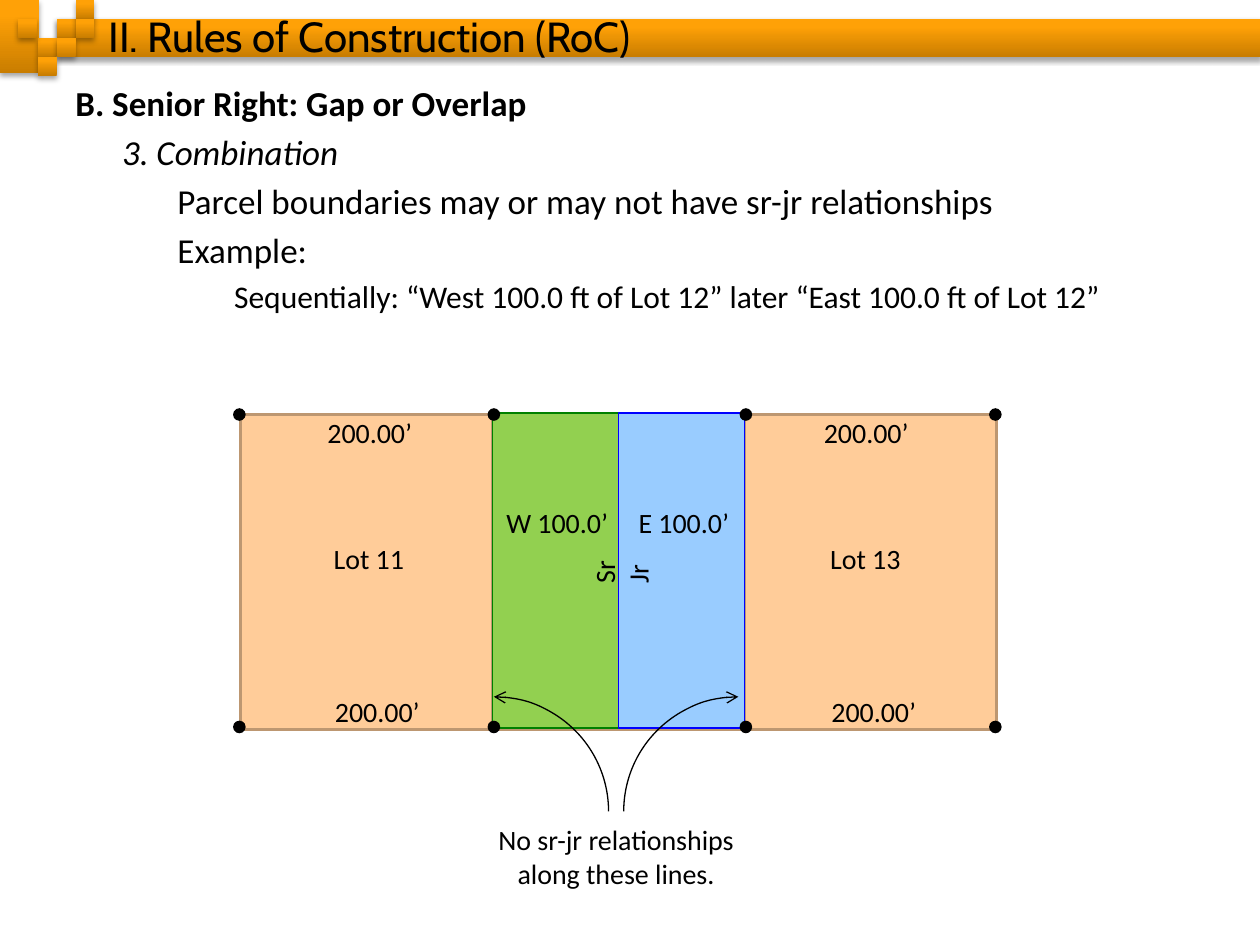
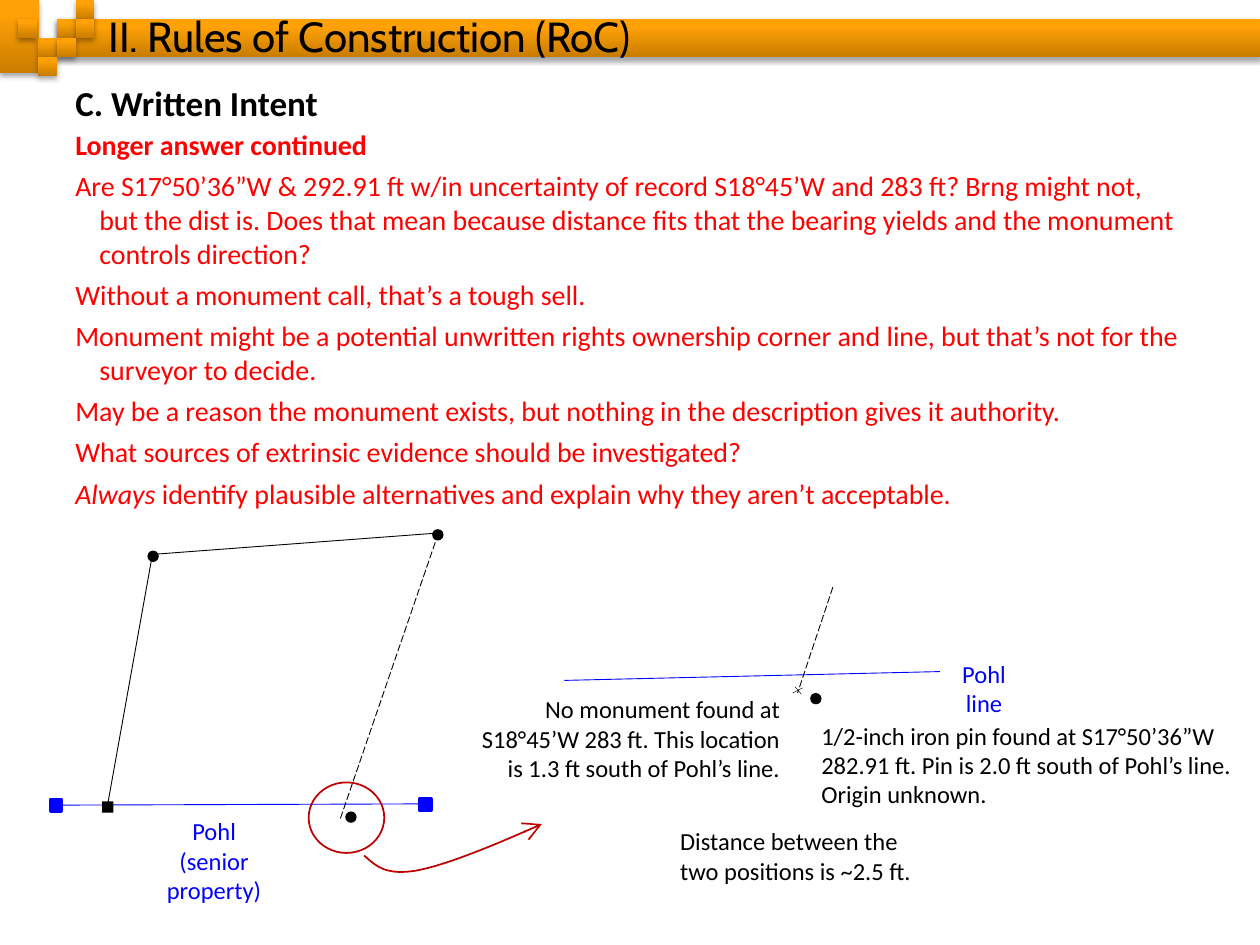
from itertools import product
from lxml.etree import SubElement as Sub
from pptx import Presentation
from pptx.dml.color import RGBColor as Rgb
from pptx.enum.dml import MSO_LINE as Dash
from pptx.enum.shapes import MSO_CONNECTOR as Conn, MSO_SHAPE as Kind
from pptx.enum.text import MSO_ANCHOR as Anchor, MSO_AUTO_SIZE as Auto, PP_ALIGN as Align
from pptx.oxml.ns import qn
from pptx.util import Inches, Pt

HUES = {
    "black": "000000", "red": "FF0000", "blue": "0000FF", "crimson": "C00000",
    "dark": "C97D00", "orange": "FFA107", "peach": "FFCC99", "tan": "BD9771",
    "lime": "92D050", "green": "008000", "sky": "99CCFF",
}
RGB = {name: Rgb.from_string(code) for name, code in HUES.items()}
TITLE = "II. Rules of Construction (RoC)"
BANDS = [(0, 0, 0.31, 0.58), (0.45, 0.15, 9.55, 0.3)] + [
    (x, y, 0.15, 0.15) for x, y in
    [(0.45, 0.15), (0.6, 0), (0.6, 0.15), (0.3, 0.3), (0.14, 0.15), (0.45, 0.3), (0.3, 0.45)]
]


def write(frame, paras, size=16, color="black", font="Calibri", wrap=True):
    """Fill a frame from (runs, paragraph format) pairs; a run is (text, font format)."""
    frame.word_wrap = wrap
    frame.auto_size = Auto.NONE
    for i, (runs, form) in enumerate(paras):
        para = frame.paragraphs[0] if i == 0 else frame.add_paragraph()
        for key, val in form.items():
            if key in ("marL", "indent"):
                para._p.get_or_add_pPr().set(key, str(Inches(val)))
            else:
                setattr(para, key, val)
        for text, look in runs:
            run = para.add_run()
            run.text = text
            for key, val in {"name": font, "size": Pt(size), **look}.items():
                setattr(run.font, key, val)
            run.font.color.rgb = RGB[color if len(look) < 3 else "black"]


def draw(shape, fill=None, line=None, width=1.0, dash=None, ends=None):
    """Set fill, line and arrowheads, and return the emptied effect list."""
    if hasattr(shape, "fill"):
        if fill:
            shape.fill.solid()
            shape.fill.fore_color.rgb = RGB[fill]
        else:
            shape.fill.background()
    if line:
        shape.line.color.rgb = RGB[line]
        shape.line.width = Pt(width)
        if dash:
            shape.line.dash_style = dash
    else:
        shape.line.fill.background()
    for tag, size in (ends or {}).items():
        tip = Sub(shape.line._get_or_add_ln(), qn(tag))
        for key, val in {"type": "arrow", "w": size, "len": size}.items():
            tip.set(key, val)
    return Sub(shape._element.spPr, qn("a:effectLst"))


deck = Presentation()
deck.slide_width, deck.slide_height = Inches(10), Inches(7.5)

hang = {"marL": 0.19, "indent": -0.19}
first = {**hang, "space_before": Pt(4)}
deep = {"marL": 0.81, "indent": 0, "space_before": Pt(4)}
note = {**hang, "space_before": Pt(2.2), "space_after": Pt(2.2)}
head = {"size": Pt(20), "bold": True, "italic": False}
big = {"size": Pt(20)}

rules = [
    ([("B. Senior Right: Gap or Overlap", head)], first),
    ([("3. Combination", {"size": Pt(20), "italic": True})],
     {"marL": 0.37, "indent": 0, "space_before": Pt(4)}),
    ([("Parcel boundaries may or may not have sr-jr relationships", big)], deep),
    ([("Example:", big)], deep),
    ([("Sequentially: “West 100.0 ft of Lot 12” later “East 100.0 ft of Lot 12”",
       {"size": Pt(18)})], {"marL": 1.26, "indent": 0, "space_before": Pt(3.6)}),
]
intent = [
    ([("C. Written Intent", head)], first),
    ([("Longer answer continued", {"bold": True})], note),
] + [([(text, {})], note) for text in (
    "Are S17°50’36”W & 292.91 ft w/in uncertainty of record S18°45’W and 283 ft? "
    "Brng might not, but the dist is. Does that mean because distance fits that the "
    "bearing yields and the monument controls direction?",
    "Without a monument call, that’s a tough sell.",
    "Monument might be a potential unwritten rights ownership corner and line, "
    "but that’s not for the surveyor to decide.",
    "May be a reason the monument exists, but nothing in the description gives it authority.",
    "What sources of extrinsic evidence should be investigated?",
)] + [
    ([("Always", {"italic": True}),
      (" identify plausible alternatives and explain why they aren’t acceptable.", {})], note),
]

# Shared bands, title and body
pages = []
for body, wide, color in ((rules, 9.19, "black"), (intent, 9, "red")):
    slide = deck.slides.add_slide(deck.slide_layouts[5])
    shapes = slide.shapes
    pages.append(shapes)
    for box in BANDS:
        band = shapes.add_shape(Kind.RECTANGLE, *map(Inches, box))
        glow = Sub(draw(band), qn("a:outerShdw"))
        for key, val in {"blurRad": Pt(3.1), "dist": Pt(1.8), "dir": 5400000,
                         "algn": "t", "rotWithShape": 0}.items():
            glow.set(key, str(val))
        tint = Sub(glow, qn("a:srgbClr"), val=HUES["black"])
        Sub(tint, qn("a:alpha"), val="35000")
        band.fill.gradient()
        band.fill.gradient_angle = 90
        for stop, (spot, hue) in zip(band.fill.gradient_stops, ((0, "dark"), (0.8, "orange"))):
            stop.position = spot
            stop.color.rgb = RGB[hue]
    text = shapes.add_textbox(*map(Inches, (0.5, 0.6, wide, 6.34)))
    write(text.text_frame, body, color=color)
    title = shapes.title
    place = {"left": 0.76, "top": 0, "width": 9, "height": 0.56}
    for key, val in place.items():
        setattr(title, key, Inches(val))
    title.text_frame.vertical_anchor = Anchor.MIDDLE
    write(title.text_frame, [([(TITLE, {})], {"alignment": Align.LEFT})], 24, font="Cabin")
    shapes._spTree.append(title._element)

# Slide 1: lots and their parts
shapes = pages[0]
lots = [(1.91 + 2 * i, 3.29, 2, "peach", "tan", 2) for i in range(3)]
parts = [(3.91, 3.28, 1, "lime", "green", 1), (4.91, 3.28, 1, "sky", "blue", 1)]
for x, y, w, fill, edge, width in lots + parts:
    lot = shapes.add_shape(Kind.RECTANGLE, *map(Inches, (x, y, w, 2.5)))
    draw(lot, fill, edge, width)

tags = [
    (2.5, 3.25, 0.88, "200.00’"), (6.44, 3.25, 0.88, "200.00’"),
    (2.56, 5.46, 0.88, "200.00’"), (6.5, 5.46, 0.88, "200.00’"),
    (2.55, 4.25, 0.77, "Lot 11"), (6.49, 4.25, 0.77, "Lot 13"),
    (3.92, 3.96, 1.02, "W 100.0’"), (4.97, 3.96, 0.93, "E 100.0’"),
]
for x, y, w, label in tags:
    tag = shapes.add_textbox(*map(Inches, (x, y, w, 0.37)))
    write(tag.text_frame, [([(label, {})], {})], wrap=False)

rank = shapes.add_textbox(*map(Inches, (4.74, 4.22, 0.38, 0.64)))
rank.rotation = 270
write(rank.text_frame, [([(label, {})], {}) for label in ("Sr", "Jr")], wrap=False)
claim = shapes.add_textbox(*map(Inches, (3.85, 6.48, 2.08, 0.64)))
write(claim.text_frame, [([(label, {})], {"alignment": Align.CENTER}) for label in
                         ("No sr-jr relationships", "along these lines.")], wrap=False)

for x, flip in ((3.01, "0"), (4.95, "1")):
    arc = shapes.add_shape(Kind.ARC, *map(Inches, (x, 5.53, 1.82, 1.82)))
    arc._element.spPr.xfrm.set("flipH", flip)
    draw(arc, line="black", width=0.75, ends={"a:headEnd": "med"})

for x, y in product((1.85, 3.87, 5.87, 7.85), (3.24, 5.72)):
    draw(shapes.add_shape(Kind.OVAL, *map(Inches, (x, y, 0.1, 0.1))), "black")

# Slide 2: survey sketch and its enlarged corner
shapes = pages[1]
lines = [
    (0.5, 6.39, 3.38, 6.38, "blue", 0.5, None),
    (0.85, 6.41, 1.21, 4.4, "black", 0.5, None),
    (1.21, 4.4, 3.48, 4.23, "black", 0.5, None),
    (3.48, 4.23, 2.7, 6.5, "black", 0.5, Dash.LONG_DASH),
    (4.48, 5.4, 7.46, 5.33, "blue", 0.5, None),
    (6.61, 4.66, 6.33, 5.5, "black", 0.5, Dash.LONG_DASH),
    (6.37, 5.46, 6.29, 5.5, "black", 0.25, None),
    (6.31, 5.45, 6.36, 5.51, "black", 0.25, None),
]
for *ends, hue, width, dash in lines:
    line = shapes.add_connector(Conn.STRAIGHT, *map(Inches, ends))
    draw(line, line=hue, width=width, dash=dash)

marks = [
    (Kind.OVAL, 2.74, 6.44, "black", None), (Kind.RECTANGLE, 0.81, 6.36, "black", None),
    (Kind.OVAL, 1.17, 4.37, "black", None), (Kind.OVAL, 3.43, 4.2, "black", None),
    (Kind.OVAL, 6.43, 5.5, "black", None),
    (Kind.RECTANGLE, 0.4, 6.35, "blue", "blue"), (Kind.RECTANGLE, 3.33, 6.34, "blue", "blue"),
]
for kind, x, y, fill, edge in marks:
    draw(shapes.add_shape(kind, *map(Inches, (x, y, 0.09, 0.09))), fill, edge, 2)

ring = shapes.add_shape(Kind.OVAL, *map(Inches, (2.45, 6.21, 0.6, 0.56)))
draw(ring, line="crimson")

curves = [
    ((2.89, 6.79), (2.98, 6.87), (3.06, 6.95), (3.3, 6.91)),
    ((3.3, 6.91), (3.53, 6.87), (3.92, 6.71), (4.3, 6.54)),
]
dots = []
for curve, step in product(curves, range(1, 11)):
    t = step / 10
    mix = ((1 - t) ** 3, 3 * t * (1 - t) ** 2, 3 * t * t * (1 - t), t ** 3)
    dots.append([Inches(sum(m * c for m, c in zip(mix, axis))) for axis in zip(*curve)])
pen = shapes.build_freeform(*map(Inches, curves[0][0]))
pen.add_line_segments(dots, close=False)
draw(pen.convert_to_shape(), line="crimson", ends={"a:tailEnd": "lg"})

notes = [
    (6.42, 5.67, 3.47, 0.81, Align.LEFT, "black",
     ["1/2-inch iron pin found at S17°50’36”W 282.91 ft. Pin is 2.0 ft south of Pohl’s line. "
      "Origin unknown."]),
    (3.6, 5.46, 2.69, 0.81, Align.RIGHT, "black",
     ["No monument found at S18°45’W 283 ft. This location is 1.3 ft south of Pohl’s line."]),
    (5.3, 6.51, 2.24, 0.57, Align.LEFT, "black",
     ["Distance between the two positions is ~2.5 ft."]),
    (1.1, 6.43, 1.2, 0.81, Align.CENTER, "blue", ["Pohl", "(senior property)"]),
    (7.46, 5.18, 0.7, 0.57, Align.CENTER, "blue", ["Pohl line"]),
]
for x, y, w, h, side, hue, texts in notes:
    memo = shapes.add_textbox(*map(Inches, (x, y, w, h)))
    write(memo.text_frame, [([(text, {})], {"alignment": side}) for text in texts], 14, hue)

deck.save("out.pptx")
